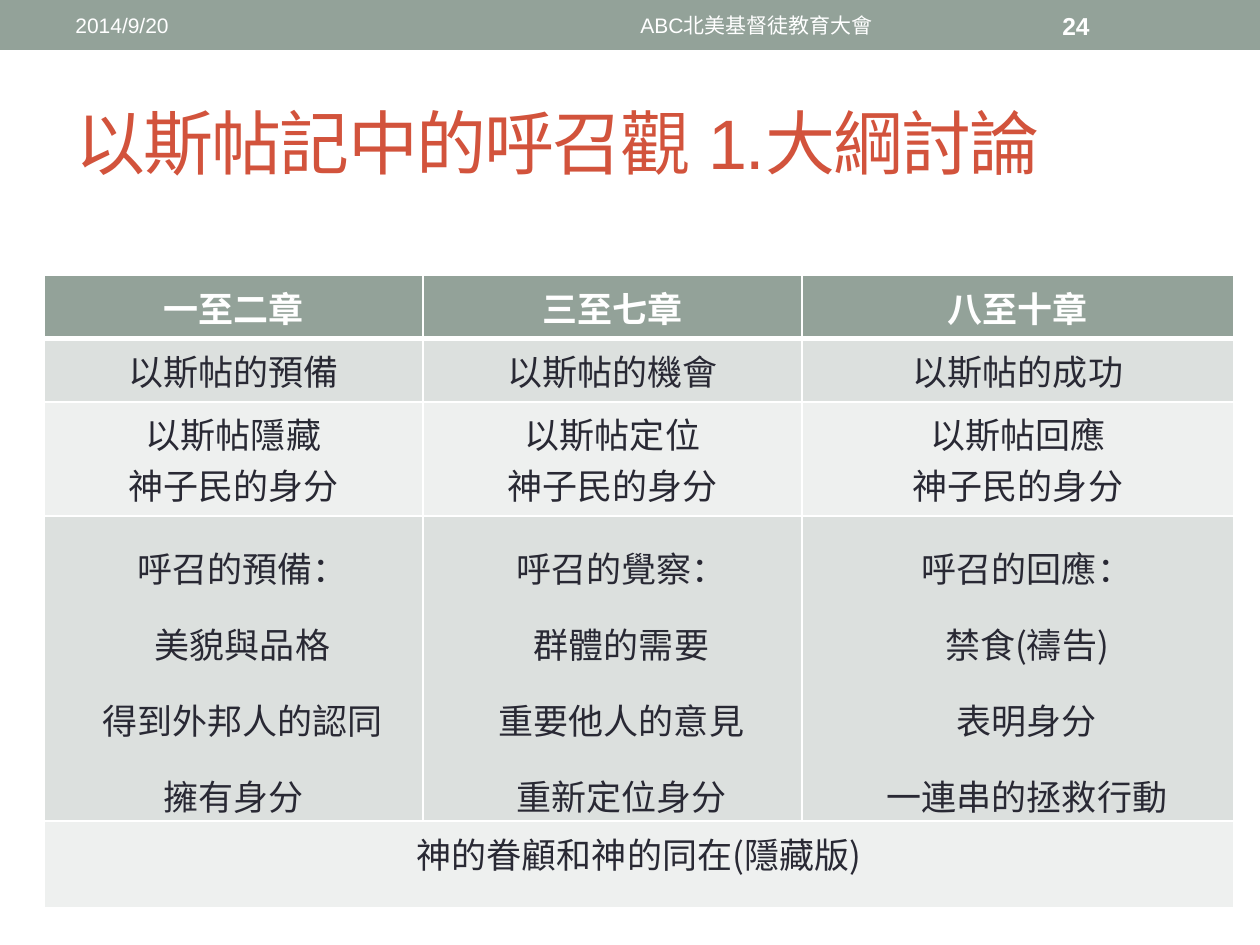
from lxml import etree
from pptx import Presentation
from pptx.dml.color import RGBColor
from pptx.enum.shapes import MSO_SHAPE
from pptx.enum.text import MSO_ANCHOR, PP_ALIGN
from pptx.oxml.ns import qn
from pptx.util import Pt

PX = 914400 // 126
RECTANGLE = MSO_SHAPE.RECTANGLE
MIDDLE = MSO_ANCHOR.MIDDLE
LEFT, CENTER = PP_ALIGN.LEFT, PP_ALIGN.CENTER
LATIN_FONT, CJK_FONT = "Arial", "Noto Sans CJK SC"
COLORS = {
    "sage": "93A299",
    "band_dark": "DCE0DE",
    "band_light": "EEF0EF",
    "ink": "292934",
    "title": "D2533C",
    "white": "FFFFFF",
}
COLUMN_WIDTHS = [379, 379, 432]
ROW_HEIGHTS = [58, 58, 67, 282, 87]
ROW_FILLS = ["sage", "band_dark", "band_light", "band_dark", "band_light"]
HEADER_ROW, CALLING_ROW, SUMMARY_ROW = 0, 3, 4
OUTLINE = [
    [["一至二章"], ["三至七章"], ["八至十章"]],
    [["以斯帖的預備"], ["以斯帖的機會"], ["以斯帖的成功"]],
    [
        ["以斯帖隱藏", "神子民的身分"],
        ["以斯帖定位", "神子民的身分"],
        ["以斯帖回應", "神子民的身分"],
    ],
    [
        ["呼召的預備：", "美貌與品格", "得到外邦人的認同\n擁有身分"],
        ["呼召的覺察：", "群體的需要", "重要他人的意見", "重新定位身分"],
        ["呼召的回應：", "禁食(禱告)", "表明身分", "一連串的拯救行動"],
    ],
    [["神的眷顧和神的同在(隱藏版)"]],
]


def px(length):
    """Turn whole pixels into EMU."""
    return length * PX


def rgb(name):
    """Look up a named colour."""
    return RGBColor.from_string(COLORS[name])


def add_run(paragraph, text, font_name, size, color, bold=False):
    """Append one styled run and return its properties element."""
    run = paragraph.add_run()
    run.text = text
    run.font.name = font_name
    run.font.size = Pt(size)
    run.font.bold = bold
    run.font.color.rgb = rgb(color)
    properties = run.font._element
    etree.SubElement(properties, qn("a:ea")).set("typeface", font_name)
    return properties


def add_label(slide, box, text, size, color="white", align=LEFT, bold=False, spacing=0):
    """Add a one-line, vertically centred text box."""
    frame = slide.shapes.add_textbox(*map(px, box)).text_frame
    frame.word_wrap = True
    frame.vertical_anchor = MIDDLE
    paragraph = frame.paragraphs[0]
    paragraph.alignment = align
    properties = add_run(paragraph, text, LATIN_FONT, size, color, bold)
    if spacing:
        properties.set("spc", str(spacing * 100))


def add_header_band(slide):
    """Add the band across the top of the slide."""
    band = slide.shapes.add_shape(RECTANGLE, 0, 0, px(1260), px(50))
    band.shadow.inherit = False
    band.fill.solid()
    band.fill.fore_color.rgb = rgb("sage")
    band.line.fill.background()


def set_borders(cell, top, bottom):
    """Draw white cell borders, one point wide at the sides."""
    properties = cell._tc.get_or_add_tcPr()
    widths = {"a:lnL": 1, "a:lnR": 1, "a:lnT": top, "a:lnB": bottom}
    for position, (tag, width) in enumerate(widths.items()):
        border = etree.Element(qn(tag), w=str(Pt(width)))
        fill = etree.SubElement(border, qn("a:solidFill"))
        etree.SubElement(fill, qn("a:srgbClr"), val=COLORS["white"])
        properties.insert(position, border)


def fill_cell(cell, lines, row):
    """Write the centred paragraphs of one outline cell."""
    is_header, is_calling = row == HEADER_ROW, row == CALLING_ROW
    if is_calling:
        cell.margin_left = cell.margin_right = px(9)
        cell.margin_top = cell.margin_bottom = 0
    frame = cell.text_frame
    for index, line in enumerate(lines):
        paragraph = frame.add_paragraph() if index else frame.paragraphs[0]
        paragraph.alignment = CENTER
        if is_calling:
            paragraph.line_spacing = 1.5
            indents = paragraph._p.get_or_add_pPr()
            indents.set("marL", "0")
            indents.set("indent", str(px(18)))
        for part_index, part in enumerate(line.split("\n")):
            if part_index:
                paragraph.add_line_break()
            add_run(paragraph, part, CJK_FONT, 20, "white" if is_header else "ink", is_header)


def add_outline_table(slide):
    """Add the chapter outline with its merged summary row."""
    table = slide.shapes.add_table(
        len(ROW_HEIGHTS), len(COLUMN_WIDTHS), px(44), px(275),
        px(sum(COLUMN_WIDTHS)), px(sum(ROW_HEIGHTS)),
    ).table
    for column, width in zip(table.columns, COLUMN_WIDTHS):
        column.width = px(width)
    for row, height in enumerate(ROW_HEIGHTS):
        table.rows[row].height = px(height)
        for cell in table.rows[row].cells:
            cell.fill.solid()
            cell.fill.fore_color.rgb = rgb(ROW_FILLS[row])
            set_borders(cell, 3 if row == HEADER_ROW + 1 else 1, 3 if row == HEADER_ROW else 1)
        for column, lines in enumerate(OUTLINE[row]):
            fill_cell(table.cell(row, column), lines, row)
    table.cell(SUMMARY_ROW, 0).merge(table.cell(SUMMARY_ROW, len(COLUMN_WIDTHS) - 1))


def main():
    """Build and save the slide."""
    presentation = Presentation()
    presentation.slide_width, presentation.slide_height = px(1260), px(945)
    slide = presentation.slides.add_slide(presentation.slide_layouts[6])
    add_header_band(slide)
    add_outline_table(slide)
    add_label(slide, (63, 73, 1134, 136), "以斯帖記中的呼召觀 1.大綱討論", 40, "title", spacing=-1)
    add_label(slide, (63, 3, 399, 45), "2014/9/20", 12)
    add_label(slide, (473, 3, 567, 45), "ABC北美基督徒教育大會", 12, align=CENTER)
    add_label(slide, (1050, 3, 147, 45), "24", 14, bold=True)
    presentation.save("out.pptx")


if __name__ == "__main__":
    main()
